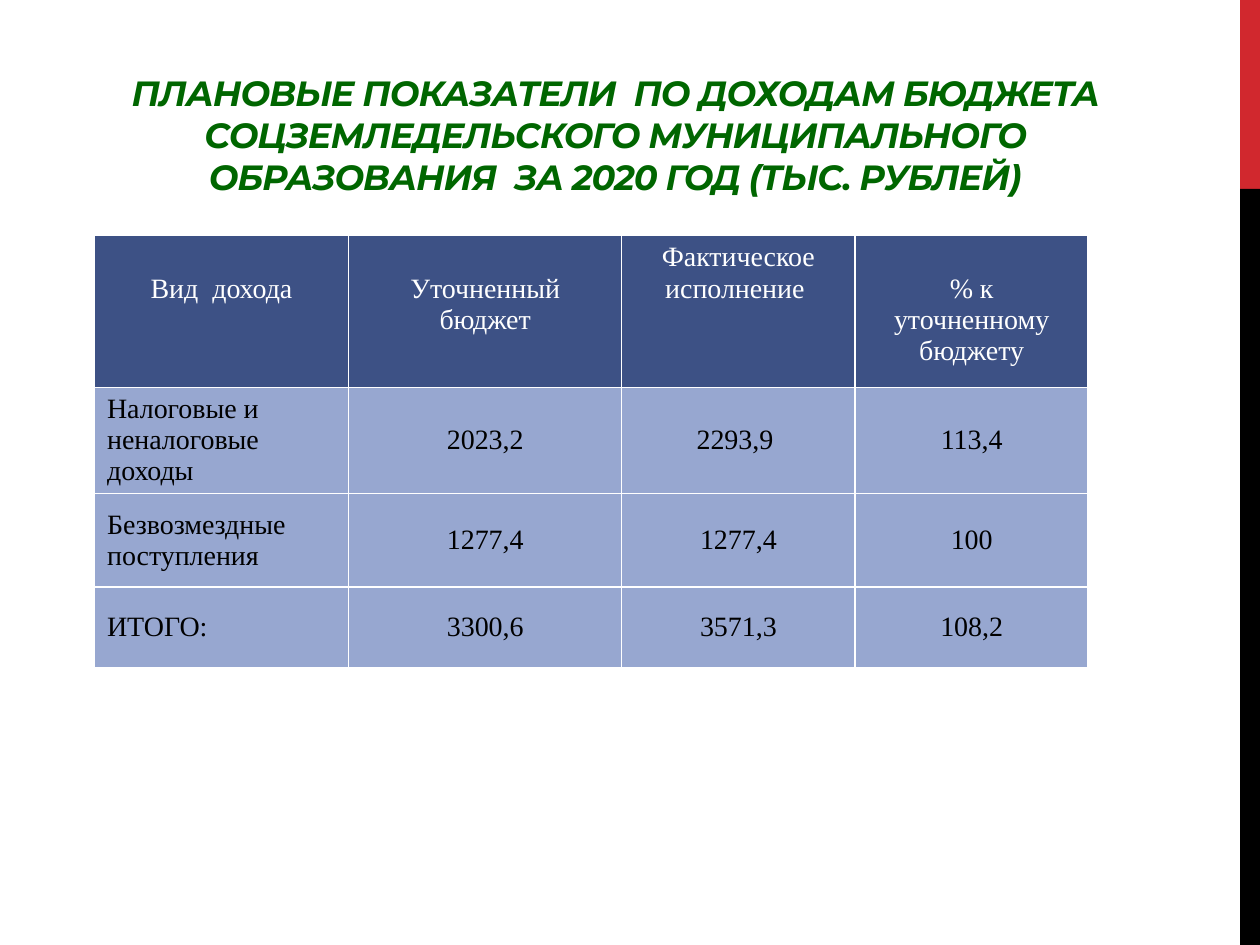
from dataclasses import dataclass

from lxml import etree
from pptx import Presentation
from pptx.dml.color import RGBColor
from pptx.enum.shapes import MSO_SHAPE
from pptx.enum.text import MSO_ANCHOR, MSO_AUTO_SIZE, PP_ALIGN
from pptx.oxml.ns import qn
from pptx.util import Pt

RECTANGLE = MSO_SHAPE.RECTANGLE
TOP, MIDDLE, BOTTOM = MSO_ANCHOR.TOP, MSO_ANCHOR.MIDDLE, MSO_ANCHOR.BOTTOM
LEFT, CENTER = PP_ALIGN.LEFT, PP_ALIGN.CENTER
FIXED_SIZE = MSO_AUTO_SIZE.NONE

COLORS = {
    "red": "D1282E",
    "black": "000000",
    "white": "FFFFFF",
    "green": "006600",
    "header": "3D5185",
    "body": "97A7D0",
}
TITLE_FONT, TABLE_FONT = "Montserrat", "Times New Roman"

SLIDE_WIDTH, SLIDE_HEIGHT = 720, 540
STRIPE_LEFT, STRIPE_SPLIT = 708.7, 108
TITLE = (
    "ПЛАНОВЫЕ ПОКАЗАТЕЛИ  ПО ДОХОДАМ БЮДЖЕТА СОЦЗЕМЛЕДЕЛЬСКОГО "
    "МУНИЦИПАЛЬНОГО ОБРАЗОВАНИЯ  ЗА 2020 ГОД (ТЫС. РУБЛЕЙ)"
)
TABLE_LEFT, TABLE_TOP = 54, 134.64
COLUMN_WIDTHS = (145.3, 156, 133.4, 133.2)
ROW_HEIGHTS = (86.7, 60.4, 53.7, 45.8)
HEADER_LINE = 18


@dataclass
class Stripe:
    top: float
    height: float
    color: str


@dataclass
class CellStyle:
    fill: str
    text: str
    align: PP_ALIGN
    anchor: MSO_ANCHOR
    margin_top: float = 3.6
    margin_side: float = 7.2


STRIPES = (
    Stripe(0, STRIPE_SPLIT, "red"),
    Stripe(STRIPE_SPLIT, SLIDE_HEIGHT - STRIPE_SPLIT, "black"),
)

# Header texts sit one line lower, except the third
HEADER_LOW = CellStyle("header", "white", CENTER, TOP, 3.6 + HEADER_LINE, 9)
HEADER_HIGH = CellStyle("header", "white", CENTER, TOP, margin_side=9)
LABEL = CellStyle("body", "black", LEFT, MIDDLE)
VALUE = CellStyle("body", "black", CENTER, MIDDLE)

HEADER_STYLES = (HEADER_LOW, HEADER_LOW, HEADER_HIGH, HEADER_LOW)
BODY_STYLES = (LABEL, VALUE, VALUE, VALUE)

# Each line of a cell text is a paragraph
ROWS = (
    ("Вид  дохода", "Уточненный бюджет", "Фактическое исполнение ",
     "% к\nуточненному\nбюджету"),
    ("Налоговые и неналоговые\nдоходы", "2023,2", "2293,9 ", "113,4"),
    ("Безвозмездные поступления", "1277,4", "1277,4", "100"),
    ("ИТОГО:", "3300,6", "3571,3", "108,2"),
)


def rgb(name: str) -> RGBColor:
    return RGBColor.from_string(COLORS[name])


def draw_stripe(page, stripe: Stripe) -> None:
    box = page.shapes.add_shape(
        RECTANGLE, Pt(STRIPE_LEFT), Pt(stripe.top),
        Pt(SLIDE_WIDTH - STRIPE_LEFT), Pt(stripe.height))
    box.shadow.inherit = False
    box.fill.solid()
    box.fill.fore_color.rgb = rgb(stripe.color)
    box.line.fill.background()


def draw_title(page, text: str) -> None:
    box = page.shapes.title
    box.left, box.top = Pt(31), Pt(25.9)
    box.width, box.height = Pt(640.8), Pt(90.7)
    frame = box.text_frame
    frame.word_wrap = True
    frame.auto_size = FIXED_SIZE
    frame.vertical_anchor = BOTTOM
    para = frame.paragraphs[0]
    para.alignment = CENTER
    span = para.add_run()
    span.text = text
    font = span.font
    font.name, font.size = TITLE_FONT, Pt(20)
    font.bold = font.italic = True
    font.color.rgb = rgb("green")
    # Letter spacing, in hundredths of a point
    span._r.get_or_add_rPr().set("spc", "-60")


def set_borders(cell, color: str, width: float) -> None:
    properties = cell._tc.get_or_add_tcPr()
    for side in ("a:lnL", "a:lnR", "a:lnT", "a:lnB"):
        line = etree.SubElement(properties, qn(side), w=str(Pt(width)))
        fill = etree.SubElement(line, qn("a:solidFill"))
        etree.SubElement(fill, qn("a:srgbClr"), val=COLORS[color])


def fill_cell(cell, text: str, style: CellStyle) -> None:
    set_borders(cell, "white", 1)
    cell.fill.solid()
    cell.fill.fore_color.rgb = rgb(style.fill)
    cell.vertical_anchor = style.anchor
    cell.margin_top = Pt(style.margin_top)
    cell.margin_left = cell.margin_right = Pt(style.margin_side)
    cell.text_frame.text = text
    for para in cell.text_frame.paragraphs:
        para.alignment = style.align
        para.font.name, para.font.size = TABLE_FONT, Pt(16)
        para.font.bold = False
        para.font.color.rgb = rgb(style.text)


def draw_table(page) -> None:
    table = page.shapes.add_table(
        len(ROW_HEIGHTS), len(COLUMN_WIDTHS), Pt(TABLE_LEFT), Pt(TABLE_TOP),
        Pt(sum(COLUMN_WIDTHS)), Pt(sum(ROW_HEIGHTS))).table
    table.horz_banding = False
    for column, width in zip(table.columns, COLUMN_WIDTHS):
        column.width = Pt(width)
    for index, (row, height) in enumerate(zip(table.rows, ROW_HEIGHTS)):
        row.height = Pt(height)
        styles = BODY_STYLES if index else HEADER_STYLES
        for cell, text, style in zip(row.cells, ROWS[index], styles):
            fill_cell(cell, text, style)


def main() -> None:
    deck = Presentation()
    deck.slide_width, deck.slide_height = Pt(SLIDE_WIDTH), Pt(SLIDE_HEIGHT)
    page = deck.slides.add_slide(deck.slide_layouts.get_by_name("Title Only"))
    for stripe in STRIPES:
        draw_stripe(page, stripe)
    draw_title(page, TITLE)
    draw_table(page)
    deck.save("out.pptx")


if __name__ == "__main__":
    main()
